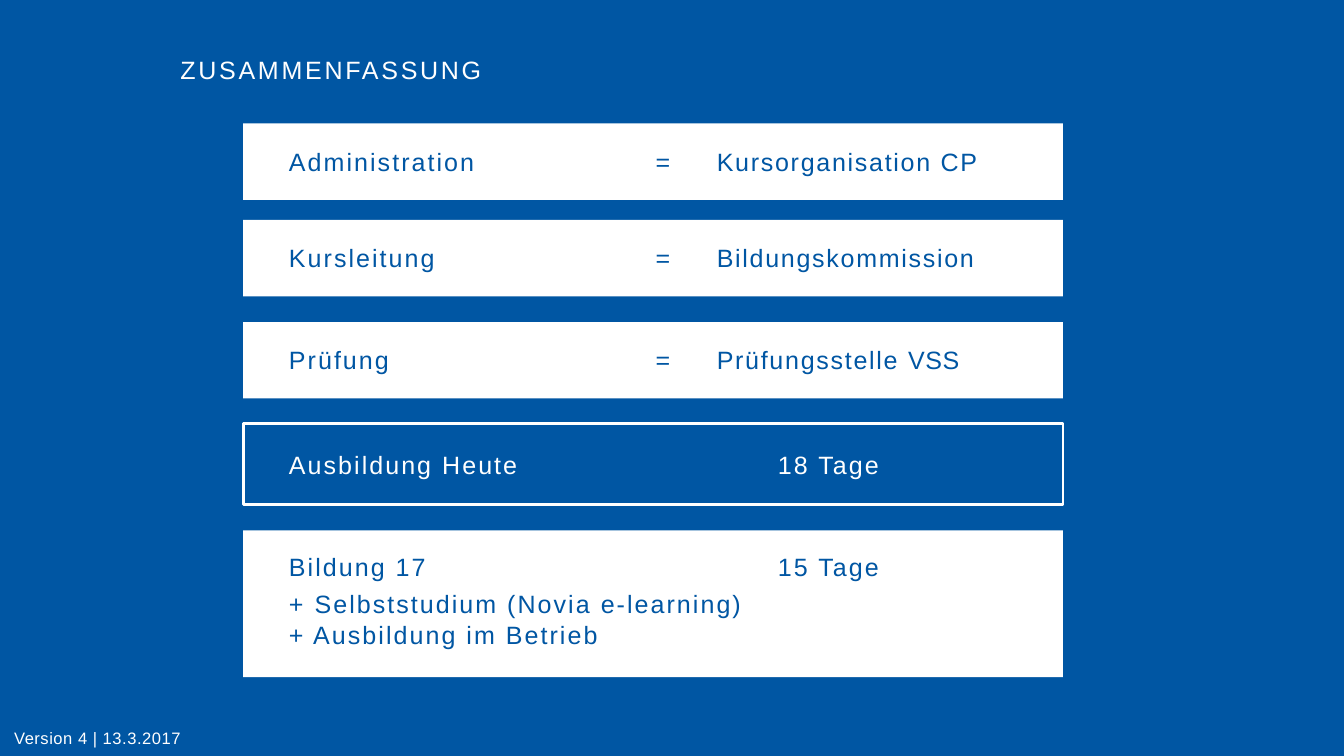
from pptx import Presentation
from pptx.dml.color import RGBColor
from pptx.enum.shapes import MSO_SHAPE
from pptx.enum.text import MSO_ANCHOR, MSO_AUTO_SIZE, PP_ALIGN
from pptx.oxml.ns import qn
from pptx.util import Inches, Pt

RECTANGLE = MSO_SHAPE.RECTANGLE
TOP = MSO_ANCHOR.TOP
NO_FIT = MSO_AUTO_SIZE.NONE
LEFT = PP_ALIGN.LEFT

BLUE, WHITE = "0056A3", "FFFFFF"
BAR_LEFT, BAR_WIDTH = 18.1, 60.98
TEXT_LEFT, TEXT_WIDTH = 21.5, 57.58
LINE_HEIGHT = 4.04
EQUALS_TABS, DAYS_TABS = (6, 7), (8,)


def color(value):
    """Turn a hex string into a colour."""
    return RGBColor.from_string(value)


class SummarySlide:
    """Draw on one slide, with lengths in percent of its size."""

    font_name = "Arial"
    font_size = 29.5

    def __init__(self, presentation):
        """Add a title-only slide with a blue background."""
        self.width = presentation.slide_width
        self.height = presentation.slide_height
        self.slide = presentation.slides.add_slide(presentation.slide_layouts[5])
        fill = self.slide.background.fill
        fill.solid()
        fill.fore_color.rgb = color(BLUE)

    def frame(self, left, top, width, height):
        """Convert percentages to a position and size."""
        return (round(self.width * left / 100), round(self.height * top / 100),
                round(self.width * width / 100), round(self.height * height / 100))

    def set_lines(self, shape, lines, ink, size=font_size, tabs=(), gaps=()):
        """Fill a shape with lines of (text, letter spacing) runs."""
        text_frame = shape.text_frame
        text_frame.word_wrap = True
        text_frame.auto_size = NO_FIT
        text_frame.vertical_anchor = TOP
        text_frame.margin_left = text_frame.margin_right = 0
        text_frame.margin_top = text_frame.margin_bottom = 0
        for index, runs in enumerate(lines):
            paragraph = text_frame.add_paragraph() if index else text_frame.paragraphs[0]
            paragraph.alignment = LEFT
            if index:
                paragraph.space_before = Pt(gaps[index - 1])
            if tabs:
                self.set_tabs(paragraph, tabs)
            paragraph.font.name = self.font_name
            paragraph.font.size = Pt(size)
            paragraph.font.color.rgb = color(ink)
            for text, spacing in runs:
                run = paragraph.add_run()
                run.text = text
                run._r.get_or_add_rPr().set("spc", str(round(spacing * 100)))

    def set_tabs(self, paragraph, tabs):
        """Add left tab stops, given in inches."""
        properties = paragraph._p.get_or_add_pPr()
        tab_list = properties.makeelement(qn("a:tabLst"), {})
        for position in tabs:
            stop = {"pos": str(Inches(position)), "algn": "l"}
            tab_list.append(tab_list.makeelement(qn("a:tab"), stop))
        properties.append(tab_list)

    def title(self, text, left, top, width, height):
        """Place and format the title placeholder."""
        shape = self.slide.shapes.title
        shape.left, shape.top, shape.width, shape.height = self.frame(left, top, width, height)
        self.set_lines(shape, [[(text, 3.2)]], WHITE)

    def text(self, lines, left, top, width, height, ink, **style):
        """Add a text box."""
        box = self.slide.shapes.add_textbox(*self.frame(left, top, width, height))
        self.set_lines(box, lines, ink, **style)

    def bar(self, top, height, outlined=False):
        """Add a white bar or a white outline."""
        shape = self.slide.shapes.add_shape(
            RECTANGLE, *self.frame(BAR_LEFT, top, BAR_WIDTH, height))
        shape.shadow.inherit = False
        if outlined:
            shape.fill.background()
            shape.line.color.rgb = color(WHITE)
            shape.line.width = Pt(3)
        else:
            shape.fill.solid()
            shape.fill.fore_color.rgb = color(WHITE)
            shape.line.fill.background()

    def entry(self, lines, top, height, offset, tabs, outlined=False, gaps=()):
        """Add a bar with its text."""
        self.bar(top, height, outlined)
        text_height = LINE_HEIGHT * len(lines)
        self.text(lines, TEXT_LEFT, top + offset, TEXT_WIDTH, text_height,
                  WHITE if outlined else BLUE, tabs=tabs, gaps=gaps)


def main():
    """Build and save the summary slide."""
    presentation = Presentation()
    presentation.slide_width = Inches(21.99)
    presentation.slide_height = Inches(12.37)
    summary = SummarySlide(presentation)
    summary.title("ZUSAMMENFASSUNG", 13.42, 7.2, 25.6, LINE_HEIGHT)

    responsibilities = [
        (16.33, "Administration", [("Kursorganisation CP", 2)]),
        (29.1, "Kursleitung", [("Bildungskommission", 2)]),
        (42.6, "Prüfung", [("Prüfungsstelle ", 2), ("VSS", 0.6)]),
    ]
    for top, task, owner in responsibilities:
        summary.entry([[(f"{task}\t=\t", 2.4), *owner]], top, 10.11, 3, EQUALS_TABS)

    summary.entry([[("Ausbildung Heute\t18 Tage", 2.4)]], 56.02, 10.75, 3.4,
                  DAYS_TABS, outlined=True)
    future = ["Bildung 17\t15 Tage", "+ Selbststudium (Novia e-learning)",
              "+ Ausbildung im Betrieb"]
    summary.entry([[(line, 2.4)] for line in future], 70.17, 19.4, 2.75,
                  DAYS_TABS, gaps=(8.6, 1.4))

    summary.text([[("Version 4 | 13.3.2017", 0.6)]], 1.05, 96.28, 28.1, 2.34,
                 WHITE, size=19.5)
    presentation.save("out.pptx")


if __name__ == "__main__":
    main()
